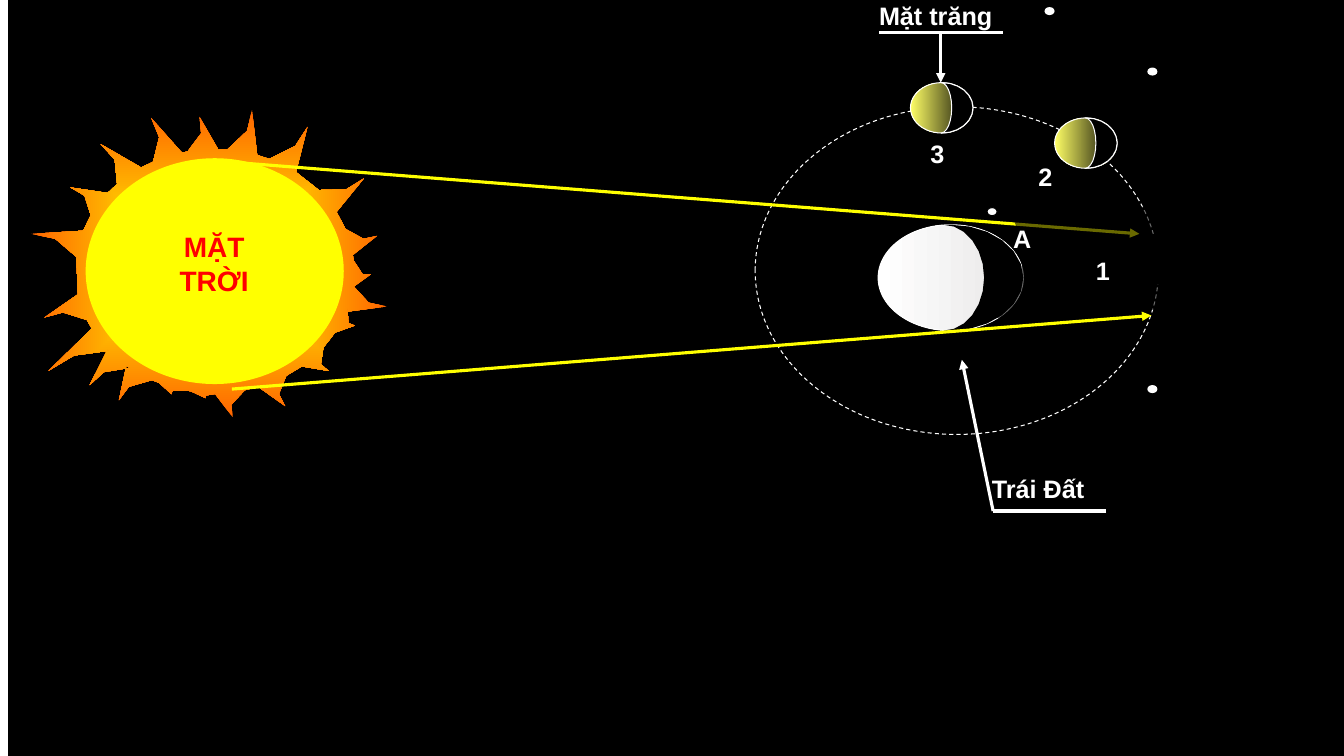
"""Build the slide on the Sun, the Earth and the phases of the Moon."""
import math
from dataclasses import dataclass

from lxml import etree
from pptx import Presentation
from pptx import util as u
from pptx.dml.color import RGBColor
from pptx.enum import dml, shapes, text
from pptx.oxml.ns import qn


@dataclass(frozen=True)
class Theme:
    space: str = "000000"
    white: str = "FFFFFF"
    ray: str = "FFFF00"
    flame: str = "FF6600"
    sun_text: str = "FF0000"
    moon: str = "FFFF66"
    earth: str = "E7E6E6"
    font: str = "Arial"
    label: int = 18
    title: int = 20
    thin: float = 0.75
    thick: float = 2.25
    shadow_alpha: int = 59


T = Theme()
SIZE = (13.33, 7.5)
SKY = (0.08, -0.05, 13.33, 7.55)
ORBIT = (7.49, 1.06, 4, 3.25)
SUN = (0.85, 1.57, 2.56, 2.24)
EARTH = (8.71, 2.23, 1.44, 1.05)
MOON_SIZE = (0.62, 0.5)
MOONS = [(9.03, 0.82), (10.46, 1.17)]
NEW_MOON = (11.16, 2.32)
STAR_SIZE = (0.1, 0.08)
STARS = [(11.38, 0.67), (11.38, 3.82), (10.36, 0.07)]
POINT_A = (9.79, 2.06)

LABEL_H = 0.4
NAME_W, MARK_W = 1.64, 0.41
NAMES = [("Mặt trăng", 8.62, -0.05), ("Trái Đất", 9.74, 4.65)]
MARKS = [("2", 10.2, 1.55), ("3", 9.13, 1.32), ("1", 10.77, 2.48), ("A", 9.95, 2.17)]
SUN_NAME = ("MẶT TRỜI", (1.56, 2.23, 1.13, 0.77))

POINTERS = [
    ((10.97, 5.07), (9.85, 5.07), False),
    ((9.85, 5.07), (9.54, 3.57), True),
    ((9.33, 0.32), (9.33, 0.82), True),
    ((8.72, 0.32), (9.95, 0.32), False),
]
TOP_RAY = ((2.31, 1.61), (11.3, 2.32))
LOW_RAY = ((2.3, 3.86), (11.42, 3.13))

MOON_NIGHT = (0.49, 0.17)
EARTH_NIGHT = (0.45, 0.28)
SHADOW_ARC = (9.78, 1.97, 0.36, 1.19)
SHADOW_END = [(12.46, 3.02), (12.47, 2.11)]
ARC_STEPS = 12
FLAME_BASE, FLAME_HALF = 1.08, 0.11
FLAME_TIPS = [
    (2.5, 1.09), (3.05, 1.26), (3.61, 1.77), (3.74, 2.34), (3.68, 2.72), (3.84, 3.04),
    (3.52, 3.23), (3.26, 3.68), (2.83, 4.03), (2.31, 4.14), (2.04, 3.95), (1.7, 3.91),
    (1.18, 3.97), (0.89, 3.82), (0.48, 3.68), (0.44, 3.15), (0.31, 2.32), (0.7, 1.86),
    (1, 1.43), (1.5, 1.17), (1.98, 1.16),
]


def rgb(color):
    return RGBColor.from_string(color)


def arc(x, y, bulge, height):
    """Return a right-bulging half ellipse from top to bottom."""
    angles = [math.pi * i / ARC_STEPS for i in range(ARC_STEPS + 1)]
    return [(x + bulge * math.sin(a), y + height * (1 - math.cos(a)) / 2) for a in angles]


def crescent(box, night):
    """Return the dark part of a globe lit from the left."""
    x, y, w, h = box
    cusp, bulge = night
    return arc(x + cusp * w, y, bulge * w, h) + arc(x + w / 2, y, w / 2, h)[::-1]


def corona_points():
    """Return narrow flames rising from an ellipse around the sun."""
    x, y, w, h = SUN
    cx, cy = x + w / 2, y + h / 2
    rx, ry = w / 2 * FLAME_BASE, h / 2 * FLAME_BASE
    points = []
    for tip in FLAME_TIPS:
        angle = math.atan2((tip[1] - cy) / ry, (tip[0] - cx) / rx)
        left, mid, right = [
            (cx + rx * math.cos(angle + d), cy + ry * math.sin(angle + d))
            for d in (-FLAME_HALF, 0, FLAME_HALF)
        ]
        waist = tuple((a + b) / 2 for a, b in zip(mid, tip))
        points += [left, waist, tip, right]
    return points


def paint(sp, fill=None, line=None):
    """Set a flat or two-colour fill and a thin outline."""
    sp.shadow.inherit = False
    if isinstance(fill, tuple):
        sp.fill.gradient()
        sp.fill.gradient_angle = 0
        for stop, color in zip(sp.fill.gradient_stops, fill):
            stop.color.rgb = rgb(color)
    elif fill:
        sp.fill.solid()
        sp.fill.fore_color.rgb = rgb(fill)
    else:
        sp.fill.background()
    if line:
        sp.line.color.rgb = rgb(line)
        sp.line.width = u.Pt(T.thin)
    else:
        sp.line.fill.background()
    return sp


def preset(tree, box, fill=None, line=None, kind=shapes.MSO_SHAPE.OVAL):
    return paint(tree.add_shape(kind, *map(u.Inches, box)), fill, line)


def outline(tree, points, fill, line=None):
    pts = [tuple(map(u.Inches, p)) for p in points]
    builder = tree.build_freeform(*pts[0])
    builder.add_line_segments(pts[1:], close=True)
    return paint(builder.convert_to_shape(), fill, line)


def globe(tree, box, fill, night, edge=None):
    group = tree.add_group_shape().shapes
    preset(group, box, fill, T.white)
    outline(group, crescent(box, night), T.space, edge)


def line(tree, start, end, arrow, color):
    c = tree.add_connector(shapes.MSO_CONNECTOR.STRAIGHT, *map(u.Inches, start + end))
    c.line.color.rgb = rgb(color)
    c.line.width = u.Pt(T.thick)
    if arrow:
        etree.SubElement(c._element.spPr.find(qn("a:ln")), qn("a:tailEnd"), type="triangle")
    etree.SubElement(c._element.spPr, qn("a:effectLst"))


def label(tree, words, box, color=T.white, size=T.label, align=text.PP_ALIGN.LEFT):
    tf = tree.add_textbox(*map(u.Inches, box)).text_frame
    tf.word_wrap = True
    p = tf.paragraphs[0]
    p.text, p.alignment = words, align
    f = p.runs[0].font
    f.name, f.size, f.bold = T.font, u.Pt(size), True
    f.color.rgb = rgb(color)


def corona(tree):
    sp = outline(tree, corona_points(), (T.ray, T.flame))
    lin = sp._element.spPr.find(".//" + qn("a:lin"))
    grad = lin.getparent()
    grad.remove(lin)
    centre = etree.SubElement(grad, qn("a:path"), {"path": "rect"})
    etree.SubElement(centre, qn("a:fillToRect"), dict.fromkeys("ltrb", "50000"))


def main():
    prs = Presentation()
    prs.slide_width, prs.slide_height = map(u.Inches, SIZE)
    tree = prs.slides.add_slide(prs.slide_layouts[6]).shapes
    preset(tree, SKY, T.space, kind=shapes.MSO_SHAPE.RECTANGLE)
    corona(tree)
    preset(tree, ORBIT, line=T.white).line.dash_style = dml.MSO_LINE.DASH
    preset(tree, SUN, T.ray)
    for spot in MOONS:
        globe(tree, spot + MOON_SIZE, (T.moon, T.space), MOON_NIGHT, T.white)
    globe(tree, EARTH, (T.white, T.earth), EARTH_NIGHT)
    for start, end, arrow in POINTERS:
        line(tree, start, end, arrow, T.white)
    for spot in STARS:
        preset(tree, spot + STAR_SIZE, T.white)
    line(tree, *TOP_RAY, True, T.ray)
    shade = outline(tree, arc(*SHADOW_ARC) + SHADOW_END, T.space)
    clr = shade._element.spPr.find(qn("a:solidFill"))[0]
    etree.SubElement(clr, qn("a:alpha"), val=str(T.shadow_alpha * 1000))
    preset(tree, POINT_A + STAR_SIZE, T.white, T.space)
    for group, width in ((NAMES, NAME_W), (MARKS, MARK_W)):
        for words, x, y in group:
            label(tree, words, (x, y, width, LABEL_H))
    preset(tree, NEW_MOON + MOON_SIZE, T.space)
    line(tree, *LOW_RAY, True, T.ray)
    label(tree, *SUN_NAME, T.sun_text, T.title, text.PP_ALIGN.CENTER)
    prs.save("out.pptx")


if __name__ == "__main__":
    main()
